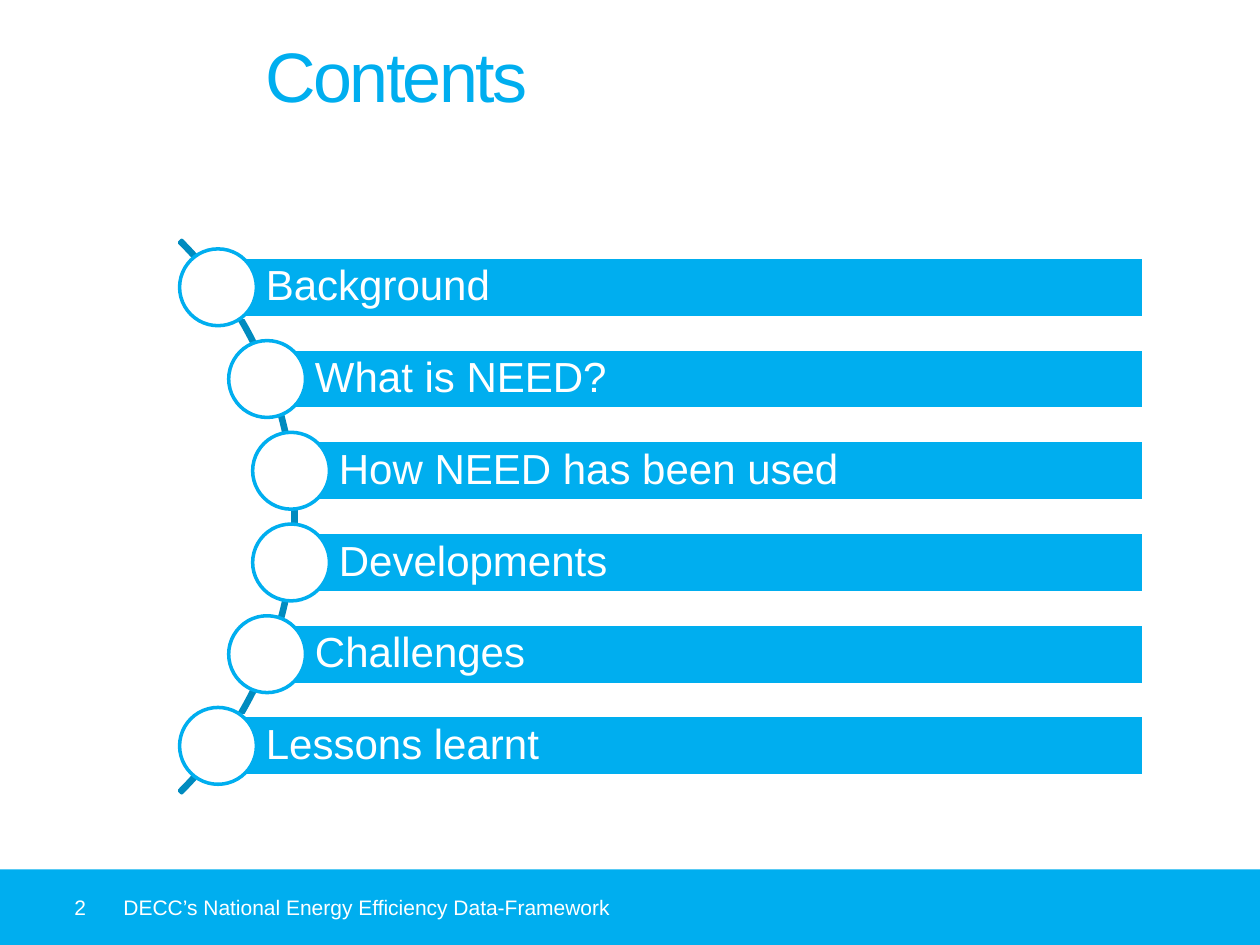
import pptx
import pptx.dml.color
import pptx.enum.shapes
import pptx.enum.text
import pptx.util

Inches = pptx.util.Inches
Pt = pptx.util.Pt
SHAPES = pptx.enum.shapes.MSO_SHAPE
ANCHORS = pptx.enum.text.MSO_ANCHOR
COLORS = {"blue": "00AEEF", "dark": "008BBF", "white": "FFFFFF"}


def rgb(name):
    return pptx.dml.color.RGBColor.from_string(COLORS[name])


class SlideBuilder:
    """Holds the text style and the current slide."""

    font = "Arial"

    def __init__(self, slide):
        self.slide = slide

    def shape(self, kind, box, fill=None, line=None):
        sp = self.slide.shapes.add_shape(kind, *map(Inches, box))
        sp.shadow.inherit = False
        if fill:
            sp.fill.solid()
            sp.fill.fore_color.rgb = rgb(fill)
        else:
            sp.fill.background()
        if line:
            sp.line.color.rgb = rgb(line)
            sp.line.width = Pt(2)
        else:
            sp.line.fill.background()
        return sp

    def label(self, sp, text, size, color="white", margins=(0, 0, 0, 0),
              anchor=ANCHORS.MIDDLE, line_spacing=1.0, tracking=0):
        tf = sp.text_frame
        left, top, right, bottom = map(Inches, margins)
        frame_format = {
            "word_wrap": True, "vertical_anchor": anchor,
            "margin_left": left, "margin_top": top,
            "margin_right": right, "margin_bottom": bottom,
        }
        for name, value in frame_format.items():
            setattr(tf, name, value)
        p = tf.paragraphs[0]
        p.alignment = pptx.enum.text.PP_ALIGN.LEFT
        p.line_spacing = line_spacing
        r = p.add_run()
        r.text = text
        for name, value in {"name": self.font, "size": Pt(size)}.items():
            setattr(r.font, name, value)
        r.font.color.rgb = rgb(color)
        if tracking:
            r._r.get_or_add_rPr().set("spc", str(int(tracking * 100)))

    def text(self, box, text, size, **style):
        sp = self.slide.shapes.add_textbox(*map(Inches, box))
        self.label(sp, text, size, **style)

    def arc(self, box, adjustments):
        sp = self.shape(SHAPES.BLOCK_ARC, box, line="dark")
        for i, value in enumerate(adjustments):
            sp.adjustments[i] = value

    def agenda_item(self, left, top, text):
        """A bar with a circle centred on its left end."""
        bar_height, bar_right, diameter = 0.48, 9.08, 0.61
        bar = self.shape(SHAPES.RECTANGLE,
                         (left, top, bar_right - left, bar_height),
                         fill="blue", line="white")
        self.label(bar, text, 24, margins=(0.38, 0.07, 0.07, 0.07),
                   line_spacing=0.9)
        self.shape(SHAPES.OVAL,
                   (left - diameter / 2, top + (bar_height - diameter) / 2,
                    diameter, diameter),
                   fill="white", line="blue")


def main():
    prs = pptx.Presentation()
    prs.slide_width, prs.slide_height = Inches(10), Inches(7.5)
    s = SlideBuilder(prs.slides.add_slide(prs.slide_layouts[6]))

    # Title
    s.text((2.11, 0.26, 7.04, 0.71), "Contents", 40, color="blue",
           anchor=ANCHORS.TOP, tracking=-1.5)

    # Footer band with page number and presentation name
    footer = s.shape(SHAPES.RECTANGLE, (0, 6.9, 10, 0.6), fill="blue")
    s.label(footer, "2", 12, margins=(0.59, 0, 0.1, 0))
    s.text((0.98, 6.9, 8.43, 0.6),
           "DECC’s National Energy Efficiency Data-Framework", 12)

    # Curve behind the agenda, from -45 to 45 degrees
    s.arc((-3.85, 1, 6.2, 6.2), (189, 27, 0.004))

    # Agenda: evenly spaced, indents mirrored about the middle
    topics = ["Background", "What is NEED?", "How NEED has been used",
              "Developments", "Challenges", "Lessons learnt"]
    indents = [1.73, 2.12, 2.31]
    first_top, last_top = 2.04, 5.68
    pitch = (last_top - first_top) / (len(topics) - 1)
    for i, (left, topic) in enumerate(zip(indents + indents[::-1], topics)):
        s.agenda_item(left, first_top + i * pitch, topic)

    prs.save("out.pptx")


if __name__ == "__main__":
    main()
